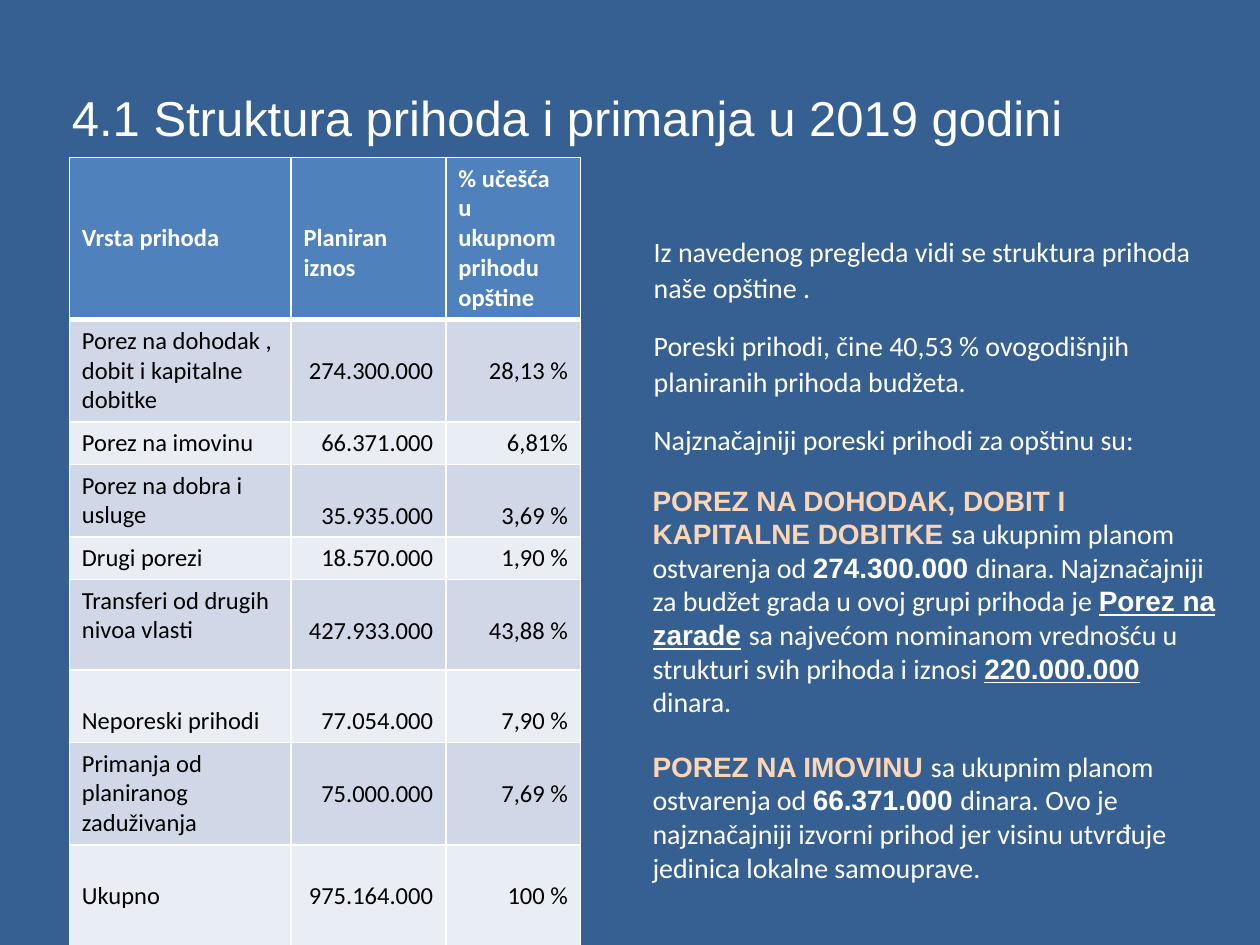
"""Build the slide on the structure of planned revenue for 2019."""
from lxml import etree
from pptx import Presentation
from pptx import util as u
from pptx.dml.color import RGBColor
from pptx.enum import text
from pptx.oxml import ns

BLUE = RGBColor(0x37, 0x60, 0x92)
HEADER = RGBColor(0x4F, 0x81, 0xBD)
BAND_DARK = RGBColor(0xD0, 0xD8, 0xE8)
BAND_LIGHT = RGBColor(0xE9, 0xED, 0xF4)
PEACH = RGBColor(0xFC, 0xD5, 0xB5)
WHITE = RGBColor(0xFF, 0xFF, 0xFF)
BLACK = RGBColor(0, 0, 0)

PLAIN = ("Calibri", WHITE, False, False)
STRONG = ("Arial", WHITE, True, False)
UNDERLINED = ("Arial", WHITE, True, True)
REVENUE_NAME = ("Arial", PEACH, True, False)

COLUMN_WIDTHS = (126.7, 88.5, 77)
LINE_HEIGHT = 17.1
HEADINGS = ("Vrsta prihoda", "Planiran iznos", "% učešća u ukupnom prihodu opštine")
REVENUES = [
    ("Porez na dohodak , dobit i kapitalne dobitke", "274.300.000", "28,13 %", 58.5, 0, 1),
    ("Porez na imovinu", "66.371.000", "6,81%", 24.3, 0, 0),
    ("Porez na dobra i usluge", "35.935.000", "3,69 %", 41.4, 0, 1),
    ("Drugi porezi", "18.570.000", "1,90 %", 24.3, 0, 0),
    ("Transferi od drugih nivoa vlasti", "427.933.000", "43,88 %", 51.8, 0, 1),
    ("Neporeski prihodi", "77.054.000", "7,90 %", 41.4, 1, 1),
    ("Primanja od planiranog zaduživanja", "75.000.000", "7,69 %", 58.5, 0, 1),
    ("Ukupno", "975.164.000", "100 %", 57.5, 1, 1),
]
OVERVIEW = (
    "Iz navedenog pregleda vidi se struktura prihoda naše opštine .",
    "Poreski prihodi, čine 40,53 % ovogodišnjih planiranih prihoda budžeta.",
    "Najznačajniji poreski prihodi za opštinu su:",
)
INCOME_TAX = [
    ("POREZ NA DOHODAK, DOBIT I KAPITALNE DOBITKE ", REVENUE_NAME),
    ("sa ukupnim planom ostvarenja od ", PLAIN),
    ("274.300.000 ", STRONG),
    ("dinara. Najznačajniji za budžet grada u ovoj grupi prihoda je ", PLAIN),
    ("Porez na zarade", UNDERLINED),
    (" ", STRONG),
    ("sa najvećom nominanom vrednošću u strukturi svih prihoda i iznosi ", PLAIN),
    ("220.000.000", UNDERLINED),
    (" ", STRONG),
    ("dinara.", PLAIN),
]
PROPERTY_TAX = [
    ("POREZ NA IMOVINU ", REVENUE_NAME),
    ("sa ukupnim planom ostvarenja od ", PLAIN),
    ("66.371.000 ", STRONG),
    ("dinara. Ovo je najznačajniji izvorni prihod jer visinu utvrđuje "
     "jedinica lokalne samouprave.", PLAIN),
]


class RevenueSlide:
    """Holds the style and the current slide."""

    def __init__(self, deck):
        self.body_size = u.Pt(16)
        self.table_size = u.Pt(14)
        self.slide = deck.slides.add_slide(deck.slide_layouts[6])
        background = self.slide.background.fill
        background.solid()
        background.fore_color.rgb = BLUE

    def format_run(self, run, size, font, color, bold=False, underline=False):
        """Apply one character style to a run."""
        run.font.size = size
        run.font.name = font
        run.font.color.rgb = color
        run.font.bold = bold
        run.font.underline = underline

    def frame(self, left, top, width, height):
        """Add a wrapping text box and return its text frame."""
        box = self.slide.shapes.add_textbox(*map(u.Pt, (left, top, width, height)))
        box.text_frame.word_wrap = True
        return box.text_frame

    def title(self, wording, *place):
        """Add the centred slide title."""
        heading = self.frame(*place)
        heading.vertical_anchor = text.MSO_ANCHOR.MIDDLE
        heading.text = wording
        heading.paragraphs[0].alignment = text.PP_ALIGN.CENTER
        self.format_run(heading.paragraphs[0].runs[0], u.Pt(28), "Arial", WHITE)

    def overview(self, statements, *place):
        """Add spaced, indented statements."""
        summary = self.frame(*place)
        summary.text = "\n".join(statements)
        for statement in summary.paragraphs:
            statement.line_spacing = u.Pt(20.2)
            statement.space_after = u.Pt(13.3)
            properties = statement._p.get_or_add_pPr()
            properties.set("marL", str(u.Pt(18)))
            properties.set("indent", "0")
            self.format_run(statement.runs[0], self.body_size, *PLAIN)

    def explanation(self, phrases, *place):
        """Add one paragraph of mixed character styles."""
        note = self.frame(*place)
        note.margin_top = u.Pt(22.8)
        for wording, style in phrases:
            run = note.paragraphs[0].add_run()
            run.text = wording
            self.format_run(run, self.body_size, *style)

    def borders(self, cell, bottom):
        """Draw white borders around a cell."""
        properties = cell._tc.get_or_add_tcPr()
        for side, weight in (("L", 1), ("R", 1), ("T", 1), ("B", bottom)):
            line = etree.SubElement(properties, ns.qn(f"a:ln{side}"), w=str(u.Pt(weight)))
            fill = etree.SubElement(line, ns.qn("a:solidFill"))
            etree.SubElement(fill, ns.qn("a:srgbClr"), val=str(WHITE))

    def cell(self, cell, wording, fill, color, lines_above, is_header, is_number):
        """Fill and format one table cell."""
        self.borders(cell, 3 if is_header else 1)
        cell.fill.solid()
        cell.fill.fore_color.rgb = fill
        cell.margin_top = u.Pt(3.6 + lines_above * LINE_HEIGHT)
        cell.text = wording
        paragraph = cell.text_frame.paragraphs[0]
        paragraph.alignment = text.PP_ALIGN.RIGHT if is_number else text.PP_ALIGN.LEFT
        self.format_run(paragraph.runs[0], self.table_size, "Calibri", color, is_header)

    def revenue_table(self, left, top, header_height):
        """Add the table of revenues with alternating bands."""
        heights = [header_height] + [revenue[3] for revenue in REVENUES]
        table = self.slide.shapes.add_table(
            len(heights), len(COLUMN_WIDTHS), u.Pt(left), u.Pt(top),
            u.Pt(sum(COLUMN_WIDTHS)), u.Pt(sum(heights))).table
        for column, width in zip(table.columns, COLUMN_WIDTHS):
            column.width = u.Pt(width)
        for row, height in zip(table.rows, heights):
            row.height = u.Pt(height)
        for column, heading in enumerate(HEADINGS):
            self.cell(table.cell(0, column), heading, HEADER, WHITE,
                      0 if column == 2 else 2, True, False)
        for row, (name, amount, share, _, above_name, above_number) in enumerate(REVENUES, 1):
            band = BAND_DARK if row % 2 else BAND_LIGHT
            for column, wording in enumerate((name, amount, share)):
                self.cell(table.cell(row, column), wording, band, BLACK,
                          above_number if column else above_name, False, column > 0)


def main():
    deck = Presentation()
    deck.slide_width, deck.slide_height = u.Pt(720), u.Pt(540)
    page = RevenueSlide(deck)
    page.revenue_table(39.6, 90, 92.7)
    page.title("4.1 Struktura prihoda i primanja u 2019 godini", 0, 21.6, 648, 90)
    page.overview(OVERVIEW, 348.5, 129.6, 348.5, 167.8)
    page.explanation(INCOME_TAX, 365.8, 253.4, 337.7, 162.7)
    page.explanation(PROPERTY_TAX, 365.8, 405.4, 354.2, 104.4)
    deck.save("out.pptx")


if __name__ == "__main__":
    main()
